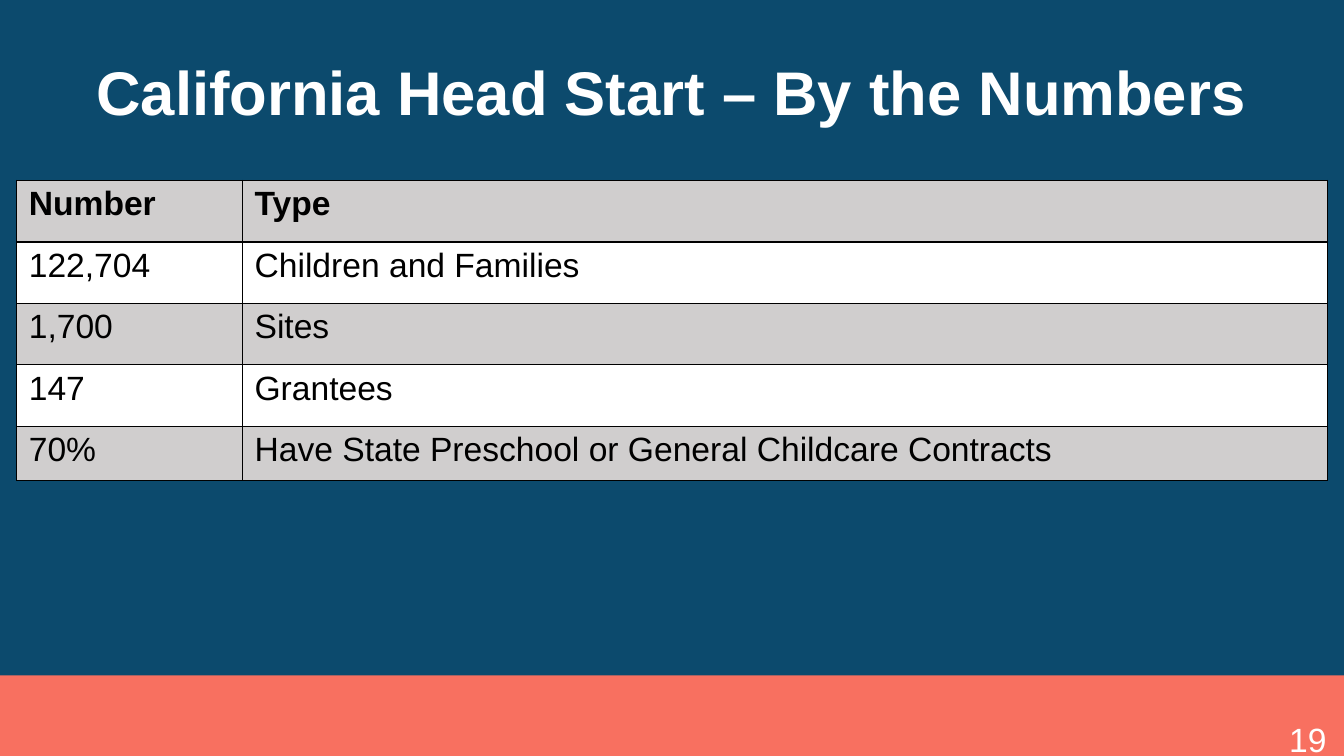
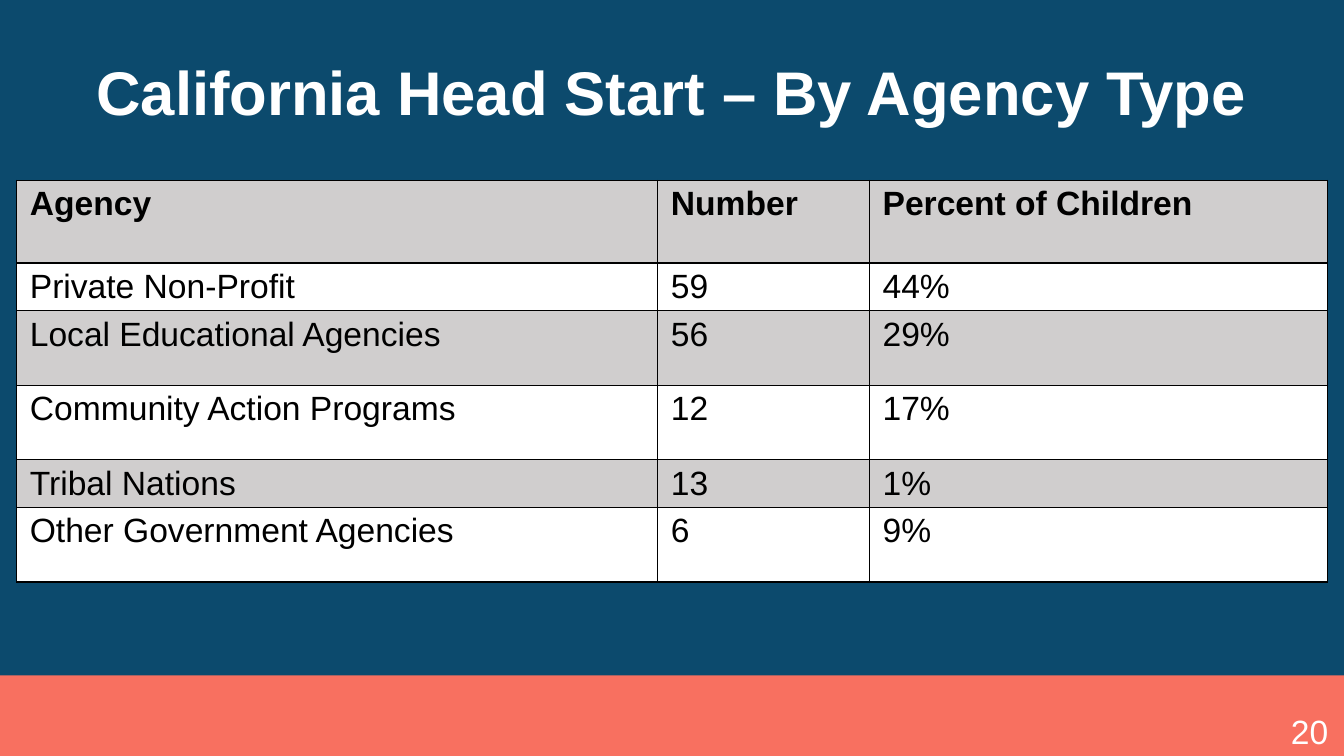
from lxml import etree
from pptx import Presentation
from pptx import util as u
from pptx.dml.color import RGBColor
from pptx.enum import shapes, text
from pptx.oxml import ns

COLORS = {"navy": "0C4A6D", "coral": "F87060", "white": "FFFFFF", "gray": "D0CECE", "black": "000000"}
COLUMN, ROW = u.Inches(1 / 6), u.Inches(0.1)
COLUMNS, ROWS = 80, 75
BAND_BOX = (0, 67, COLUMNS, 8)
TITLE_BOX = (1, 2.2, 78, 14.5)
TABLE_LEFT, TABLE_TOP, TABLE_WIDTH = 1, 17.9, 78
TITLE_FONT = {"name": "Arial", "size": u.Pt(44), "bold": True}
BODY_FONT = {"name": "Arial", "size": u.Pt(24), "bold": False}
HEADER_FONT = {**BODY_FONT, "bold": True}

SLIDES = [
    {
        "title": "California Head Start – By the Numbers",
        "columns": [13.44, 64.56],
        "rows": [6.1, 6.1, 6.1, 6.1, 5.4],
        "inset": 0.12,
        "cells": [
            ("Number", "Type"),
            ("122,704", "Children and Families"),
            ("1,700", "Sites"),
            ("147", "Grantees"),
            ("70%", "Have State Preschool or General Childcare Contracts"),
        ],
        "number": "19",
        "number_box": (76.15, 70.8, 3.85, 4),
    },
    {
        "title": "California Head Start – By Agency Type",
        "columns": [38.16, 12.6, 27.24],
        "rows": [8.2, 4.6, 7.4, 7.4, 4.6, 7.4],
        "inset": 0.13,
        "cells": [
            ("Agency", "Number", "Percent of Children"),
            ("Private Non-Profit", "59", "44%"),
            ("Local Educational Agencies", "56", "29%"),
            ("Community Action Programs", "12", "17%"),
            ("Tribal Nations", "13", "1%"),
            ("Other Government Agencies", "6", "9%"),
        ],
        "number": "20",
        "number_box": (76.25, 70, 3.75, 5),
    },
]


def grid(box):
    """Turn a box in grid columns and rows into lengths."""
    left, top, width, height = box
    return [u.Emu(round(cells * unit)) for cells, unit in
            ((left, COLUMN), (top, ROW), (width, COLUMN), (height, ROW))]


def apply(target, values):
    """Set every attribute named in a dict of format values."""
    for name, value in values.items():
        setattr(target, name, value)


def paint(fill, color):
    """Give a fill one solid colour."""
    fill.solid()
    fill.fore_color.rgb = RGBColor.from_string(COLORS[color])


def write(frame, wording, font, color):
    """Write one formatted run and return its paragraph."""
    paragraph = frame.paragraphs[0]
    run = paragraph.add_run()
    run.text = wording
    apply(run.font, font)
    run.font.color.rgb = RGBColor.from_string(COLORS[color])
    return paragraph


def set_up_master(master, slide):
    """Put the background and the footer band on the slide master."""
    paint(master.background.fill, "navy")
    band = slide.shapes.add_shape(shapes.MSO_SHAPE.RECTANGLE, *grid(BAND_BOX))
    band.shadow.inherit = False
    paint(band.fill, "coral")
    band.line.fill.background()
    master.shapes.element.insert(2, band.element)


def add_title(slide, wording, box):
    """Place and format the title placeholder."""
    title = slide.shapes.title
    apply(title, dict(zip(("left", "top", "width", "height"), grid(box))))
    apply(title.text_frame, {"word_wrap": True, "vertical_anchor": text.MSO_ANCHOR.MIDDLE})
    paragraph = write(title.text_frame, wording, TITLE_FONT, "white")
    apply(paragraph, {"alignment": text.PP_ALIGN.CENTER, "line_spacing": 0.9})


def add_borders(cell):
    """Draw a thin black line on each side of a cell."""
    properties = cell._tc.get_or_add_tcPr()
    for side in ("lnL", "lnR", "lnT", "lnB"):
        line = etree.SubElement(properties, ns.qn(f"a:{side}"), w=str(u.Pt(1)))
        fill = etree.SubElement(line, ns.qn("a:solidFill"))
        etree.SubElement(fill, ns.qn("a:srgbClr"), val=COLORS["black"])


def add_data_table(slide, content, left, top, width):
    """Build a table with a bold header and alternating row fills."""
    cells, columns, rows = content["cells"], content["columns"], content["rows"]
    box = grid((left, top, width, sum(rows)))
    table = slide.shapes.add_table(len(rows), len(columns), *box).table
    apply(table, {"first_row": False, "horz_banding": False})
    for column, share in zip(table.columns, columns):
        column.width = u.Emu(round(box[2] * share / sum(columns)))
    inset = u.Inches(content["inset"])
    for index, (row, height, wordings) in enumerate(zip(table.rows, rows, cells)):
        row.height = u.Emu(round(height * ROW))
        for cell, wording in zip(row.cells, wordings):
            add_borders(cell)
            paint(cell.fill, "white" if index % 2 else "gray")
            apply(cell, {"margin_left": inset, "margin_right": inset,
                         "margin_top": u.Inches(0.05), "margin_bottom": u.Inches(0.05)})
            write(cell.text_frame, wording, BODY_FONT if index else HEADER_FONT, "black")


def add_page_number(slide, wording, box):
    """Write the page number at the corner of the band."""
    frame = slide.shapes.add_textbox(*grid(box)).text_frame
    frame.word_wrap = True
    write(frame, wording, BODY_FONT, "white")


def build_slide(slide, content):
    """Fill one slide with its title, table and page number."""
    add_title(slide, content["title"], TITLE_BOX)
    add_data_table(slide, content, TABLE_LEFT, TABLE_TOP, TABLE_WIDTH)
    add_page_number(slide, content["number"], content["number_box"])


def main():
    """Build and save the presentation."""
    presentation = Presentation()
    apply(presentation, {"slide_width": COLUMNS * COLUMN, "slide_height": ROWS * ROW})
    title_only = presentation.slide_layouts.get_by_name("Title Only")
    slides = [presentation.slides.add_slide(title_only) for _ in SLIDES]
    set_up_master(presentation.slide_master, slides[0])
    for slide, content in zip(slides, SLIDES):
        build_slide(slide, content)
    presentation.save("out.pptx")


if __name__ == "__main__":
    main()
